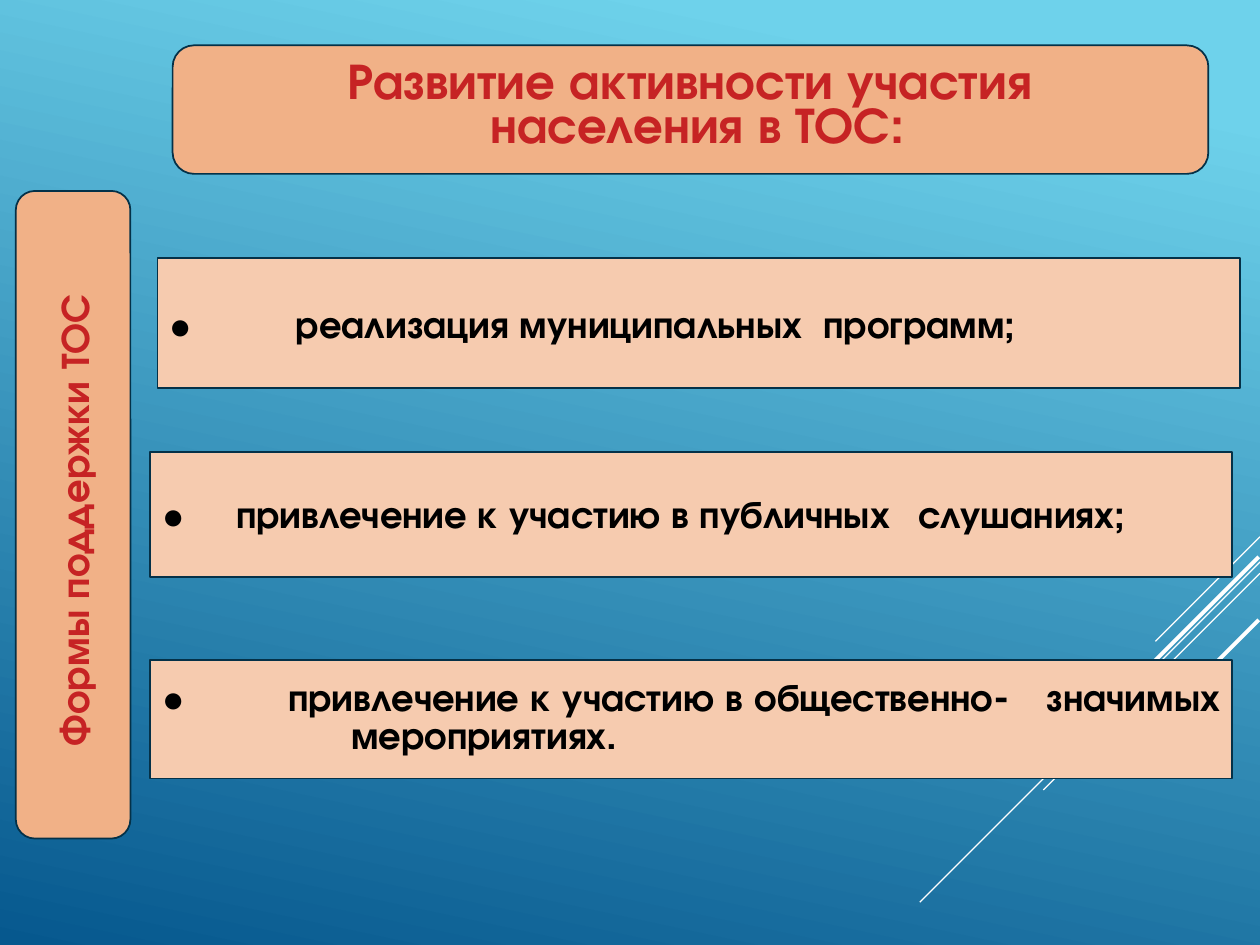
from pptx import Presentation
from pptx.dml.color import RGBColor
from pptx.enum.shapes import MSO_CONNECTOR, MSO_SHAPE
from pptx.enum.text import MSO_ANCHOR, PP_ALIGN
from pptx.oxml.ns import qn
from pptx.util import Inches, Pt
from lxml import etree

RECTANGLE, ROUNDED = MSO_SHAPE.RECTANGLE, MSO_SHAPE.ROUNDED_RECTANGLE
STRAIGHT, MIDDLE = MSO_CONNECTOR.STRAIGHT, MSO_ANCHOR.MIDDLE
CENTER, JUSTIFY = PP_ALIGN.CENTER, PP_ALIGN.JUSTIFY

SKY = RGBColor(0x6E, 0xD2, 0xEB)
DEEP_BLUE = RGBColor(0x06, 0x58, 0x8E)
WHITE = RGBColor(0xFF, 0xFF, 0xFF)
BLACK = RGBColor(0, 0, 0)
RED = RGBColor(0xC6, 0x23, 0x24)
ORANGE = RGBColor(0xF1, 0xB1, 0x87)
PEACH = RGBColor(0xF6, 0xCB, 0xAF)
OUTLINE = RGBColor(0x04, 0x31, 0x48)
FONT = "TeX Gyre Adventor"

# right end x, y, horizontal run of a 45-degree streak, width in points
STREAKS = [
    (10, 4.26, 0.83, 0.75),
    (10, 4.46, 2.7, 0.75),
    (10, 4.55, 1.72, 0.75),
    (9.99, 4.42, 1.57, 2.25),
    (9.99, 4.92, 1.14, 2.25),
]

HEADING = {"bold": True, "name": FONT}
# left, top, height, text, line spacing, hanging indent, right inset
MEASURES = [
    (1.25, 2.05, 1.03, "•\tреализация муниципальных  программ; ", None, 1, 0.1),
    (1.19, 3.59, 0.99, "•\t привлечение к участию в публичных \tслушаниях;",
     Pt(24), 0, 0.58),
    (1.19, 5.24, 0.94,
     "•\tпривлечение к участию в общественно-\tзначимых \tмероприятиях. ",
     Pt(21.6), 1, 0.1),
]
MEASURE_WIDTH = 8.59
TEXT_START = 1


def paint_background(slide):
    fill = slide.background.fill
    fill.gradient()
    fill.gradient_angle = 258
    for stop, color, position in zip(fill.gradient_stops, (SKY, DEEP_BLUE), (0.1, 1)):
        stop.color.rgb = color
        stop.position = position


def add_streak(slide, x, y, run, width):
    streak = slide.shapes.add_connector(
        STRAIGHT, Inches(x), Inches(y), Inches(x - run), Inches(y + run))
    streak.line.color.rgb = WHITE
    streak.line.width = Pt(width)
    etree.SubElement(streak._element.spPr, qn("a:effectLst"))


def add_panel(slide, kind, box, fill, lines, size, color, align, spacing=None):
    """Add an outlined panel with one paragraph per line of text."""
    panel = slide.shapes.add_shape(kind, *map(Inches, box))
    panel.shadow.inherit = False
    panel.fill.solid()
    panel.fill.fore_color.rgb = fill
    panel.line.color.rgb = OUTLINE
    panel.line.width = Pt(1)
    frame = panel.text_frame
    frame.word_wrap = True
    frame.vertical_anchor = MIDDLE
    for number, line in enumerate(lines):
        paragraph = frame.add_paragraph() if number else frame.paragraphs[0]
        paragraph.alignment = align
        paragraph.line_spacing = spacing
        run = paragraph.add_run()
        run.text = line
        for name, value in {**HEADING, "size": Pt(size)}.items():
            setattr(run.font, name, value)
        run.font.color.rgb = color
    return panel


def add_measure(slide, left, top, height, text, spacing, indent, right_inset):
    """Add a justified panel whose text starts at a tab after the bullet."""
    panel = add_panel(slide, RECTANGLE, (left, top, MEASURE_WIDTH, height),
                      PEACH, [text], 22, BLACK, JUSTIFY, spacing)
    panel.text_frame.margin_right = Inches(right_inset)
    properties = panel.text_frame.paragraphs[0]._p.get_or_add_pPr()
    properties.set("marL", str(Inches(indent)))
    properties.set("indent", str(-Inches(indent)))
    if not indent:
        tabs = etree.SubElement(properties, qn("a:tabLst"))
        etree.SubElement(tabs, qn("a:tab"), pos=str(Inches(TEXT_START)), algn="l")


def main():
    presentation = Presentation()
    presentation.slide_width, presentation.slide_height = Inches(10), Inches(7.5)
    slide = presentation.slides.add_slide(presentation.slide_layouts[6])
    paint_background(slide)
    for streak in STREAKS:
        add_streak(slide, *streak)
    add_panel(slide, ROUNDED, (1.37, 0.36, 8.22, 1.02), ORANGE,
              ["Развитие активности участия", " населения в ТОС:"],
              29, RED, CENTER, Pt(25))
    for measure in MEASURES:
        add_measure(slide, *measure)
    side_title = add_panel(slide, ROUNDED, (-1.99, 3.63, 5.14, 0.91), ORANGE,
                           ["Формы поддержки ТОС "], 23, RED, CENTER)
    side_title.rotation = 270
    presentation.save("out.pptx")


if __name__ == "__main__":
    main()
